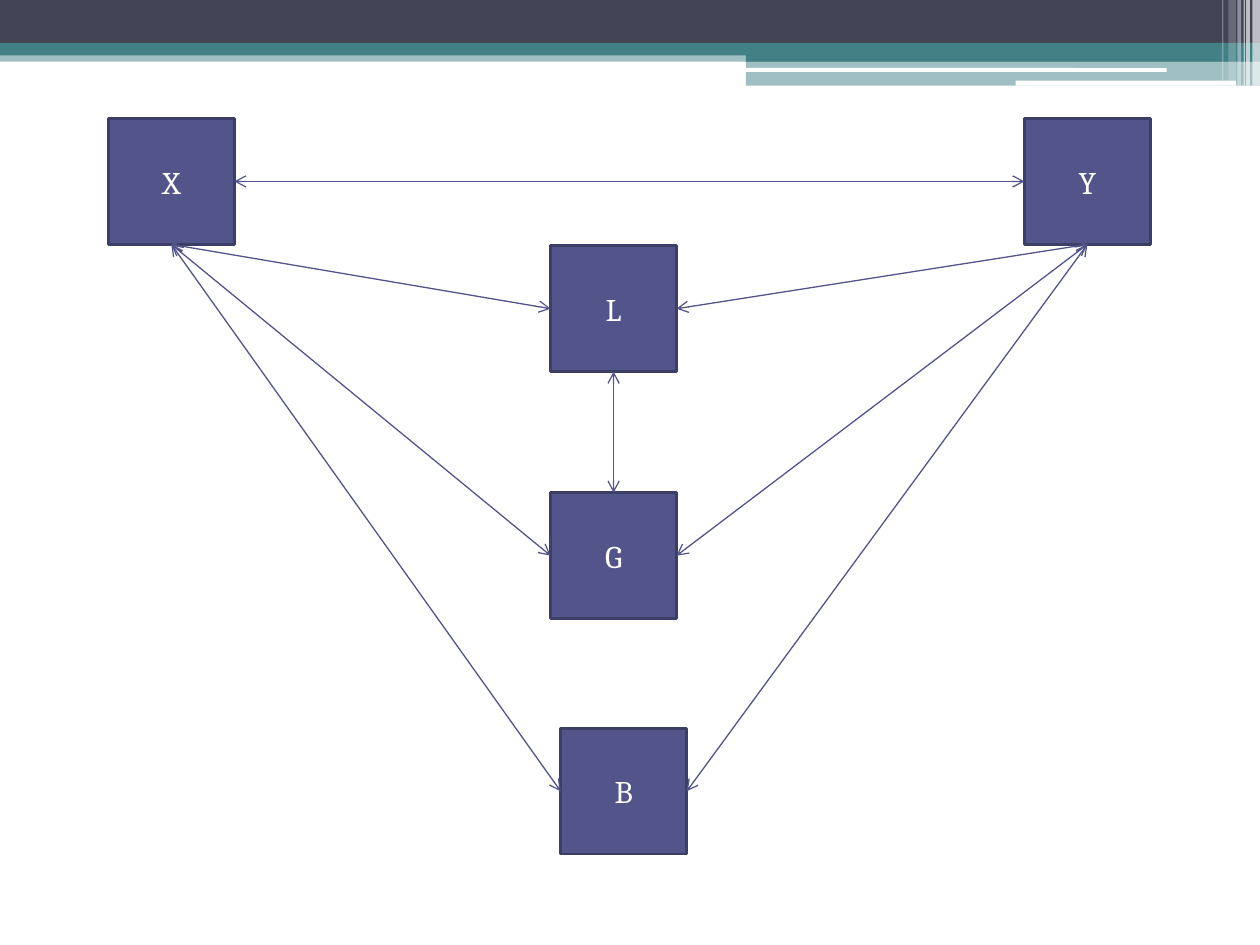
from pptx import Presentation
from pptx.dml.color import RGBColor
from pptx.enum.shapes import MSO_CONNECTOR, MSO_SHAPE
from pptx.enum.text import MSO_ANCHOR, PP_ALIGN
from pptx.oxml.ns import qn
from pptx.util import Inches, Pt
from lxml.etree import SubElement

SLATE = RGBColor(0x42, 0x44, 0x56)
TEAL = RGBColor(0x43, 0x80, 0x86)
INDIGO = RGBColor(0x53, 0x54, 0x8A)
DARK_INDIGO = RGBColor(0x3D, 0x3E, 0x66)
WHITE = RGBColor(0xFF, 0xFF, 0xFF)

NODE_SIZE = 1
TOP, LEFT, BOTTOM, RIGHT = range(4)

prs = Presentation()
prs.slide_width = Inches(10)
prs.slide_height = Inches(7.5)
slide = prs.slides.add_slide(prs.slide_layouts[6])


def add_box(left, top, width, height, color, opacity=100, preset=MSO_SHAPE.RECTANGLE):
    box = slide.shapes.add_shape(
        preset, Inches(left), Inches(top), Inches(width), Inches(height))
    box.shadow.inherit = False
    box.fill.solid()
    box.fill.fore_color.rgb = color
    box.line.fill.background()
    if opacity < 100:
        color_xml = box.fill._xPr.find(qn("a:solidFill"))[0]
        SubElement(color_xml, qn("a:alpha"), val=str(opacity * 1000))
    return box


bands = [
    (0, 0.4, 10, 0.09, TEAL, 50),
    (0, 0, 10, 0.34, SLATE, 100),
    (0, 0.34, 10, 0.1, TEAL, 100),
    (5.92, 0.39, 4.08, 0.1, TEAL, 100),
    (5.92, 0.48, 4.08, 0.2, TEAL, 50),
]
for band in bands:
    add_box(*band)

for left, top, width, height in [(5.91, 0.54, 3.35, 0.03), (8.06, 0.64, 1.75, 0.04)]:
    groove = add_box(left, top, width, height, WHITE, preset=MSO_SHAPE.ROUNDED_RECTANGLE)
    groove.adjustments[0] = 0.17

stripes = [
    (9.94, 0.06, 0.68, 65),
    (9.89, 0.03, 0.68, 65),
    (9.87, 0.01, 0.68, 60),
    (9.82, 0.03, 0.68, 40),
    (9.75, 0.06, 0.64, 20),
    (9.7, 0.01, 0.64, 30),
]
for left, width, height, opacity in stripes:
    add_box(left, 0, width, height, WHITE, opacity)

node_places = {
    "X": (0.86, 0.94),
    "Y": (8.13, 0.94),
    "B": (4.45, 5.78),
    "L": (4.37, 1.95),
    "G": (4.37, 3.91),
}
nodes = {}
for label, (left, top) in node_places.items():
    node = add_box(left, top, NODE_SIZE, NODE_SIZE, INDIGO)
    node.line.color.rgb = DARK_INDIGO
    node.line.width = Pt(1.5)
    node.text_frame.vertical_anchor = MSO_ANCHOR.MIDDLE
    paragraph = node.text_frame.paragraphs[0]
    paragraph.text = label
    paragraph.alignment = PP_ALIGN.CENTER
    paragraph.font.name = "Cambria"
    paragraph.font.size = Pt(18)
    paragraph.font.color.rgb = WHITE
    nodes[label] = node

links = [
    ("X", RIGHT, "Y", LEFT),
    ("X", BOTTOM, "L", LEFT),
    ("L", RIGHT, "Y", BOTTOM),
    ("G", TOP, "L", BOTTOM),
    ("B", LEFT, "X", BOTTOM),
    ("B", RIGHT, "Y", BOTTOM),
    ("G", RIGHT, "Y", BOTTOM),
    ("G", LEFT, "X", BOTTOM),
]
for start, start_side, end, end_side in links:
    link = slide.shapes.add_connector(MSO_CONNECTOR.STRAIGHT, 0, 0, 0, 0)
    link.begin_connect(nodes[start], start_side)
    link.end_connect(nodes[end], end_side)
    link.line.color.rgb = INDIGO
    link.line.width = Pt(0.75)
    line_xml = link.line._get_or_add_ln()
    for arrow_end in ("a:headEnd", "a:tailEnd"):
        SubElement(line_xml, qn(arrow_end), type="arrow")
    SubElement(link._element.spPr, qn("a:effectLst"))

prs.save("out.pptx")
